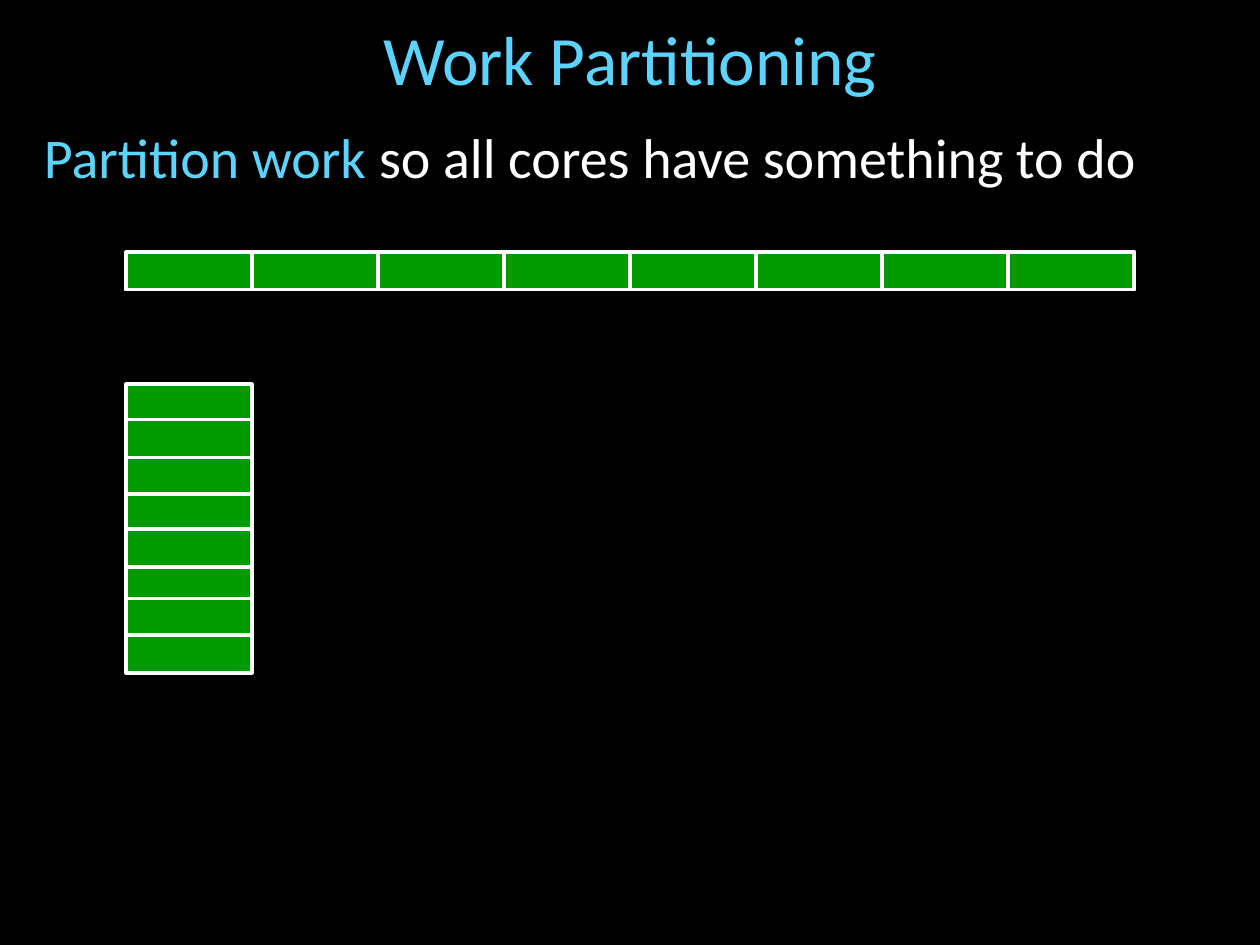
from pptx import Presentation
from pptx.dml.color import RGBColor
from pptx.enum.shapes import MSO_SHAPE as Shape
from pptx.enum.text import MSO_ANCHOR as Anchor, PP_ALIGN as Align
from pptx.util import Pt


def color(hex_value):
    return RGBColor.from_string(hex_value)


class Deck:
    FONT = "Calibri"
    BACK, ACCENT, TEXT, WORK = "000000", "5DD4FF", "FFFFFF", "009900"

    def __init__(self, width, height):
        self.prs = Presentation()
        self.prs.slide_width, self.prs.slide_height = Pt(width), Pt(height)

    def add_slide(self):
        self.s = self.prs.slides.add_slide(self.prs.slide_layouts[6])
        fill = self.s.background.fill
        fill.solid()
        fill.fore_color.rgb = color(self.BACK)

    def text(self, x, y, w, h, runs, size, align=Align.LEFT,
             anchor=Anchor.TOP, before=0):
        tf = self.s.shapes.add_textbox(Pt(x), Pt(y), Pt(w), Pt(h)).text_frame
        tf.word_wrap = True
        tf.vertical_anchor = anchor
        p = tf.paragraphs[0]
        p.alignment, p.space_before = align, Pt(before)
        for wording, hex_value in runs:
            r = p.add_run()
            r.text = wording
            r.font.name, r.font.size = self.FONT, Pt(size)
            r.font.color.rgb = color(hex_value)

    def block(self, x, y, w, h):
        sp = self.s.shapes.add_shape(Shape.RECTANGLE, Pt(x), Pt(y), Pt(w), Pt(h))
        sp.shadow.inherit = False
        sp.fill.solid()
        sp.fill.fore_color.rgb = color(self.WORK)
        sp.line.color.rgb = color(self.TEXT)
        sp.line.width = Pt(2)


def main():
    deck = Deck(720, 540)
    deck.add_slide()

    # Title and statement
    deck.text(18, 12.24, 684, 41.76, [("Work Partitioning", deck.ACCENT)],
              39.6, Align.CENTER, Anchor.MIDDLE)
    deck.text(18, 66.24, 684, 444.24,
              [("Partition work ", deck.ACCENT),
               ("so all cores have something to do", deck.TEXT)], 32, before=2)

    # Whole work as one bar, divided into equal parts
    left, bar_top, cell_w, cell_h, parts = 72, 144, 72, 21.6, 8
    deck.block(left, bar_top, parts * cell_w, cell_h)
    for i in range(parts):
        deck.block(left + i * cell_w, bar_top, cell_w, cell_h)

    # The same parts stacked, slightly overlapping
    for top in (219.6, 239.76, 261.36, 282.24, 302.4, 324, 342, 362.88):
        deck.block(left, top, cell_w, cell_h)

    deck.prs.save("out.pptx")


if __name__ == "__main__":
    main()
